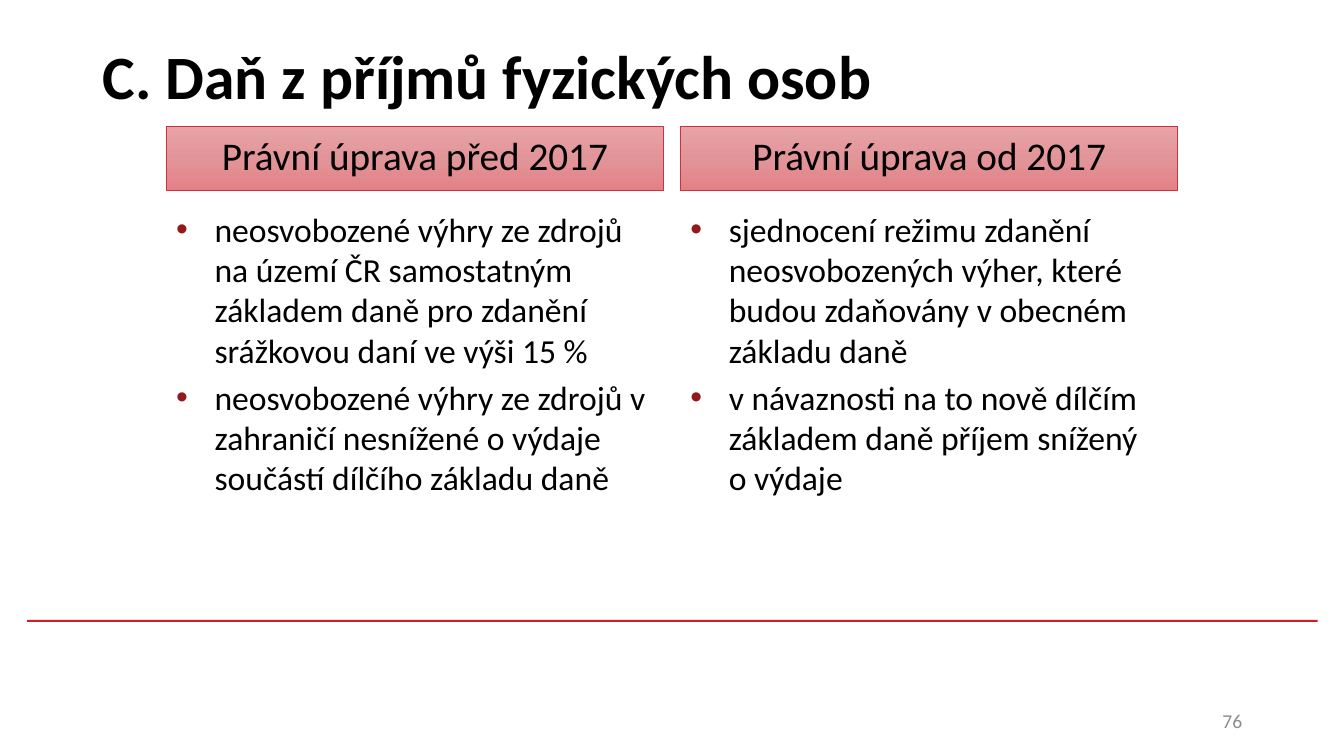
from copy import deepcopy

from lxml import etree
from pptx import Presentation
from pptx.dml.color import RGBColor
from pptx.enum.shapes import MSO_SHAPE
from pptx.enum.text import MSO_ANCHOR, PP_ALIGN
from pptx.oxml.ns import qn
from pptx.util import Pt

RECTANGLE = MSO_SHAPE.RECTANGLE
TOP, MIDDLE = MSO_ANCHOR.TOP, MSO_ANCHOR.MIDDLE
LEFT, CENTER, RIGHT = PP_ALIGN.LEFT, PP_ALIGN.CENTER, PP_ALIGN.RIGHT

PX = 9144  # 100 px to the inch
COLORS = {
    "text": "000000", "number": "8C8C8C", "rule": "CD1F21", "bullet": "92191C",
    "border": "D22D40", "light": "E7A3A7", "middle": "E29599", "dark": "E38186",
}
HEADER_STOPS = [(0, "light"), (0.5, "middle"), (1, "dark")]
FORMATS = {
    "title": {"size": Pt(44), "bold": True},
    "header": {"size": Pt(28)},
    "body": {"size": Pt(24)},
    "number": {"size": Pt(14)},
}
BULLET_INDENT = 38
COLUMN_LEFT, COLUMN_STEP, COLUMN_WIDTH = 165, 510, 493

COLUMNS = [
    ("Právní úprava před 2017", [
        "neosvobozené výhry ze zdrojů na území ČR samostatným základem daně "
        "pro zdanění srážkovou daní ve výši 15 %",
        "neosvobozené výhry ze zdrojů v zahraničí nesnížené o výdaje "
        "součástí dílčího základu daně",
    ]),
    ("Právní úprava od 2017", [
        "sjednocení režimu zdanění neosvobozených výher, které budou "
        "zdaňovány v obecném základu daně",
        "v návaznosti na to nově dílčím základem daně příjem snížený\vo výdaje",
    ]),
]


def color(name):
    return RGBColor.from_string(COLORS[name])


class SlideBuilder:
    def __init__(self, page, font_name):
        self.page = page
        self.font_name = font_name

    def fill_text(self, box, texts, style, ink="text", align=LEFT, anchor=TOP, bullets=False):
        frame = box.text_frame
        frame.word_wrap = True
        frame.vertical_anchor = anchor
        for index, text in enumerate(texts):
            para = frame.add_paragraph() if index else frame.paragraphs[0]
            para.text = text
            para.alignment = align
            if index:
                para.space_before = Pt(FORMATS[style]["size"].pt * 0.2)
            if bullets:
                self.add_bullet(para)
            for span in para.runs:
                for name, value in FORMATS[style].items():
                    setattr(span.font, name, value)
                span.font.name = self.font_name
                span.font.color.rgb = color(ink)

    def add_bullet(self, para):
        properties = para._p.get_or_add_pPr()
        properties.set("marL", str(BULLET_INDENT * PX))
        properties.set("indent", str(-BULLET_INDENT * PX))
        tint = etree.SubElement(properties, qn("a:buClr"))
        etree.SubElement(tint, qn("a:srgbClr"), val=COLORS["bullet"])
        etree.SubElement(properties, qn("a:buFont"), typeface="Arial")
        etree.SubElement(properties, qn("a:buChar"), char="•")

    def text(self, place, texts, style, **options):
        box = self.page.shapes.add_textbox(*(length * PX for length in place))
        self.fill_text(box, texts, style, **options)

    def rectangle(self, place):
        box = self.page.shapes.add_shape(RECTANGLE, *(length * PX for length in place))
        box.shadow.inherit = False
        return box

    def rule(self, place):
        bar = self.rectangle(place)
        bar.fill.solid()
        bar.fill.fore_color.rgb = color("rule")
        bar.line.fill.background()

    def header(self, place, text):
        box = self.rectangle(place)
        box.fill.gradient()
        box.fill.gradient_angle = 270
        # A new gradient has two stops; the header needs a third
        stops = box.element.spPr.find(qn("a:gradFill")).find(qn("a:gsLst"))
        stops.append(deepcopy(stops[-1]))
        for stop, (position, name) in zip(box.fill.gradient_stops, HEADER_STOPS):
            stop.position = position
            stop.color.rgb = color(name)
        box.line.color.rgb = color("border")
        box.line.width = Pt(0.5)
        self.fill_text(box, [text], "header", align=CENTER)


def main():
    deck = Presentation()
    deck.slide_width, deck.slide_height = 1333 * PX, 750 * PX
    builder = SlideBuilder(deck.slides.add_slide(deck.slide_layouts[6]), "Calibri")

    # Rule, title and page number
    builder.rule((27, 615, 1280, 2))
    builder.text((92, 2, 1150, 145), ["C. Daň z příjmů fyzických osob"], "title", anchor=MIDDLE)
    builder.text((942, 695, 300, 40), ["76"], "number", ink="number", align=RIGHT, anchor=MIDDLE)

    # Two columns, each a header above a bullet list
    for index, (heading, points) in enumerate(COLUMNS):
        left = COLUMN_LEFT + index * COLUMN_STEP
        builder.header((left, 125, COLUMN_WIDTH, 64), heading)
        builder.text((left, 202, COLUMN_WIDTH, 396), points, "body", bullets=True)

    deck.save("out.pptx")


if __name__ == "__main__":
    main()
